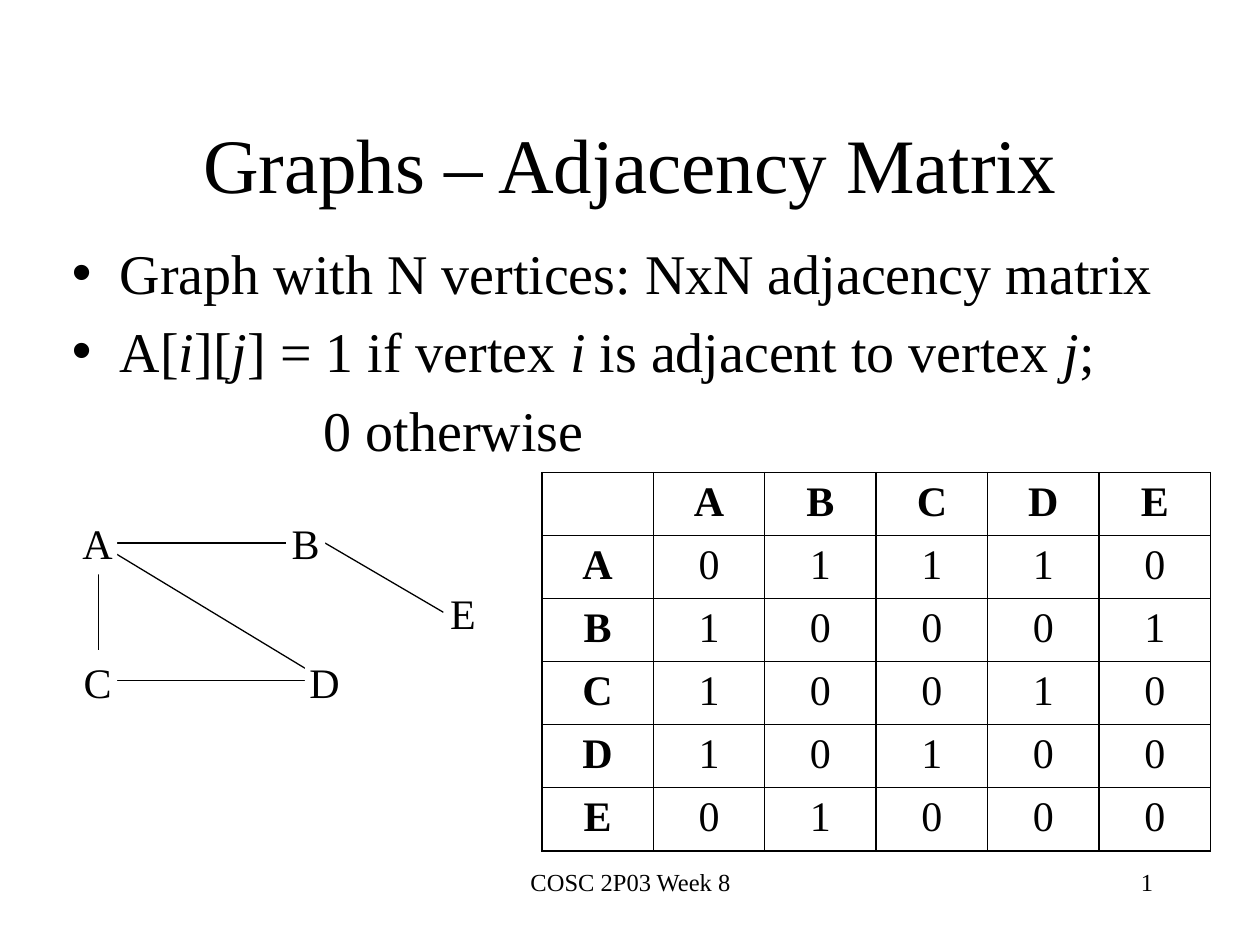
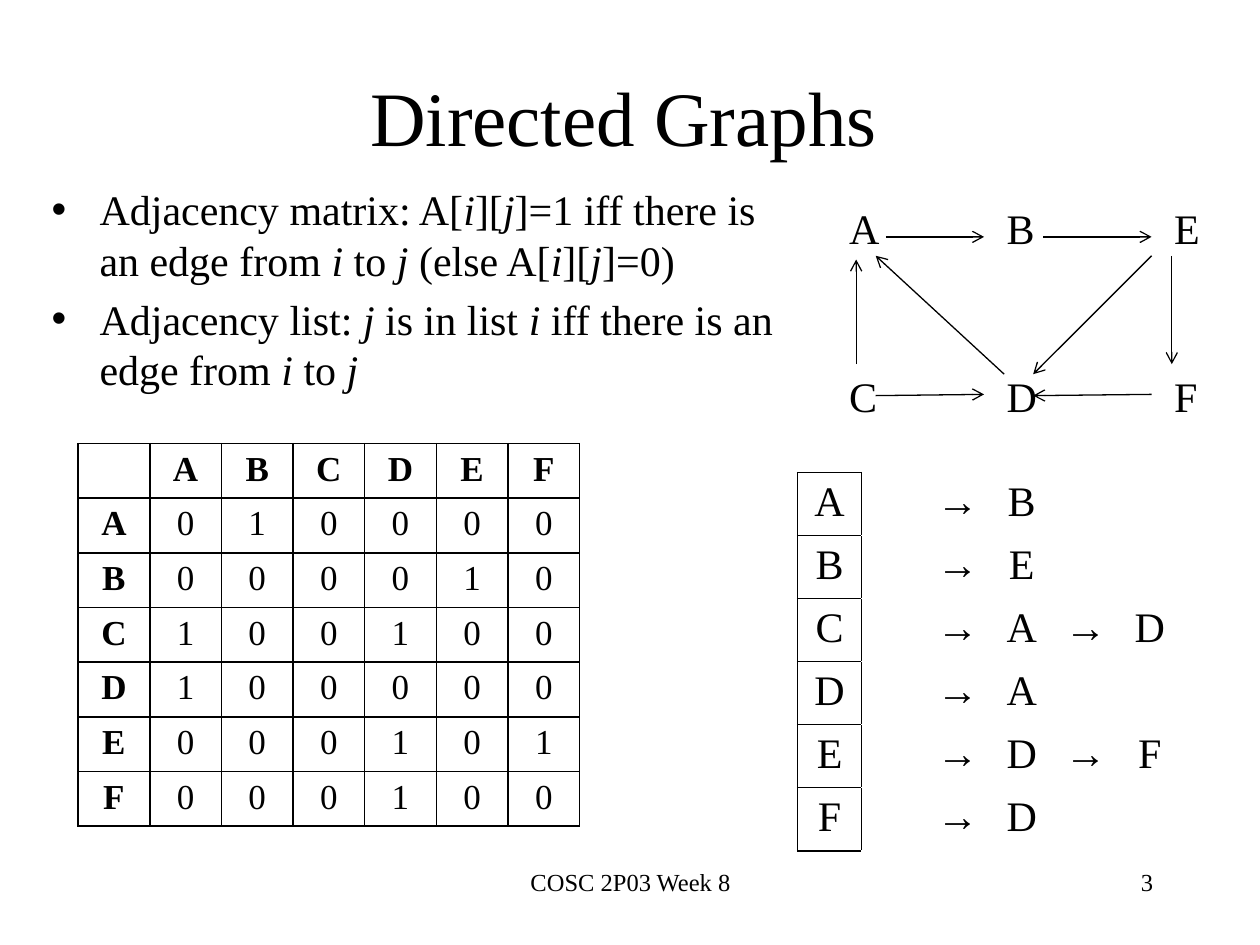
import pptx
import pptx.dml.color
import pptx.enum.shapes
import pptx.enum.text
import pptx.oxml
import pptx.oxml.ns
import pptx.util

Inches = pptx.util.Inches
ALIGN = pptx.enum.text.PP_ALIGN
COLORS = {"ink": "000000", "paper": "FFFFFF"}
FONT = "Times New Roman"
NAMESPACE = pptx.oxml.ns.nsdecls("a")


def write(para, text, size, align=None, bold=False):
    """Fill a paragraph; text between asterisks is italic."""
    if align is not None:
        para.alignment = align
    for index, part in enumerate(text.split("*")):
        if not part:
            continue
        span = para.add_run()
        span.text = part
        look = {"name": FONT, "size": pptx.util.Pt(size), "bold": bold, "italic": index % 2 == 1}
        for key, value in look.items():
            setattr(span.font, key, value)
        span.font.color.rgb = pptx.dml.color.RGBColor.from_string(COLORS["ink"])


def add_grid(page, area, rows, size, boxed_list=False):
    """Draw a ruled matrix, or a list whose first column alone is ruled."""
    frame = page.shapes.add_table(len(rows), len(rows[0]), *map(Inches, area))
    table = frame.table
    table.first_row = table.horz_banding = False
    for r, row in enumerate(rows):
        for c, text in enumerate(row):
            cell = table.cell(r, c)
            for side in ("left", "right", "top", "bottom"):
                setattr(cell, f"margin_{side}", Inches(0.05))
            header = not boxed_list and (r == 0 or c == 0)
            write(cell.text_frame.paragraphs[0], text, size, ALIGN.CENTER, header)
            if boxed_list:
                cell.fill.solid()
                cell.fill.fore_color.rgb = pptx.dml.color.RGBColor.from_string(COLORS["paper"])
            else:
                cell.fill.background()
            # Borders come before the fill in the cell properties
            properties = cell._tc.get_or_add_tcPr()
            for position, edge in enumerate("LRTB"):
                ruled = not boxed_list or c == 0 or (c == 1 and edge == "L")
                color = COLORS["ink" if ruled else "paper"]
                properties.insert(position, pptx.oxml.parse_xml(
                    f'<a:ln{edge} {NAMESPACE} w="12700"><a:solidFill>'
                    f'<a:srgbClr val="{color}"/></a:solidFill></a:ln{edge}>'))


# Edge ends are points, or a node name with the side to join
pages = [
    {
        "title": "Graphs – Adjacency Matrix", "title_area": (0.75, 0.67, 8.5, 1.25),
        "body_area": (0.47, 1.84, 9.06, 4.83), "body_size": 32, "number": "1",
        "body": ["Graph with N vertices: NxN adjacency matrix",
                 "A[*i*][*j*] = 1 if vertex *i* is adjacent to vertex *j*;"],
        "continuation": "0 otherwise",
        "directed": False,
        "nodes": {"A": (0.62, 4.06), "C": (0.62, 5.16), "B": (2.27, 4.06),
                  "D": (2.42, 5.16), "E": (3.52, 4.61)},
        "edges": [((0.78, 4.31), ("B", 3)), ((0.78, 4.31), (0.78, 5.4)),
                  ((0.78, 4.31), (2.58, 5.4)), (("B", 3), ("E", 1)),
                  ((0.78, 5.4), (2.58, 5.4))],
        "matrix_area": (4.3, 3.75, 5.31, 3), "matrix_size": 24,
        "matrix": {"A": "01110", "B": "10001", "C": "10010", "D": "10100", "E": "01000"},
    },
    {
        "title": "Directed Graphs", "title_area": (0.7, 0.55, 8.5, 0.74),
        "body_area": (0.31, 1.41, 6.09, 5.39), "body_size": 24, "number": "3",
        "body": ["Adjacency matrix: A[*i*][*j*]=1 iff there is an edge from *i* to *j* "
                 "(else A[*i*][*j*]=0)",
                 "Adjacency list: *j* is in list *i *iff there is an edge from *i* to *j*"],
        "directed": True,
        "nodes": {"A": (6.64, 1.56), "C": (6.64, 2.89), "D": (7.89, 2.89),
                  "F": (9.22, 2.89), "E": (9.22, 1.56), "B": (7.89, 1.56)},
        "edges": [((7.03, 1.88), (7.81, 1.88)), ((8.28, 1.88), (9.14, 1.88)),
                  ((9.3, 2.03), (9.3, 2.89)), ((7.97, 2.97), (6.95, 2.03)),
                  ((9.14, 2.03), (8.2, 2.97)), (("C", 0), ("A", 2)),
                  ((9.14, 3.13), ("D", 3)), (("C", 3), (7.81, 3.13))],
        "matrix_area": (0.62, 3.52, 3.98, 3.03), "matrix_size": 20,
        "matrix": {"A": "010000", "B": "000010", "C": "100100",
                   "D": "100000", "E": "000101", "F": "000100"},
    },
]

deck = pptx.Presentation()
deck.slide_width, deck.slide_height = Inches(10), Inches(7.5)

for content in pages:
    page = deck.slides.add_slide(deck.slide_layouts[1])

    # Title and bullets
    title, body = page.shapes.title, page.placeholders[1]
    for holder, area in ((title, content["title_area"]), (body, content["body_area"])):
        for key, value in zip(("left", "top", "width", "height"), area):
            setattr(holder, key, Inches(value))
        holder.text_frame.auto_size = pptx.enum.text.MSO_AUTO_SIZE.NONE
    write(title.text_frame.paragraphs[0], content["title"], 44, ALIGN.CENTER)
    for index, text in enumerate(content["body"]):
        para = body.text_frame.add_paragraph() if index else body.text_frame.paragraphs[0]
        write(para, text, content["body_size"])
        properties = para._p.get_or_add_pPr()
        properties.set("marL", str(Inches(0.38)))
        properties.set("indent", str(-Inches(0.38)))
    if "continuation" in content:
        para = body.text_frame.add_paragraph()
        write(para, content["continuation"], content["body_size"])
        properties = para._p.get_or_add_pPr()
        properties.set("marL", str(Inches(2)))
        properties.set("indent", "0")
        properties.append(pptx.oxml.parse_xml(f"<a:buNone {NAMESPACE}/>"))

    # Footer and page number
    for text, left, width, align in (("COSC 2P03 Week 8", 3.42, 3.17, ALIGN.CENTER),
                                     (content["number"], 7.17, 2.08, ALIGN.RIGHT)):
        box = page.shapes.add_textbox(Inches(left), Inches(6.83), Inches(width), Inches(0.5))
        box.text_frame.word_wrap = True
        write(box.text_frame.paragraphs[0], text, 14, align)

    # Graph nodes
    nodes = {}
    for name, (left, top) in content["nodes"].items():
        area = [Inches(value) for value in (left, top, 0.31, 0.5)]
        if content["directed"]:
            node = page.shapes.add_textbox(*area)
        else:
            node = page.shapes.add_shape(pptx.enum.shapes.MSO_SHAPE.RECTANGLE, *area)
            node.shadow.inherit = False
            node.fill.solid()
            node.fill.fore_color.rgb = pptx.dml.color.RGBColor.from_string(COLORS["paper"])
            node.line.fill.background()
            node.text_frame.margin_left = node.text_frame.margin_right = 0
        node.text_frame.word_wrap = True
        write(node.text_frame.paragraphs[0], name, 24, ALIGN.CENTER)
        nodes[name] = node

    # Graph edges, placed behind the nodes
    for ends in content["edges"]:
        points = [(0, 0) if end[0] in nodes else end for end in ends]
        edge = page.shapes.add_connector(
            pptx.enum.shapes.MSO_CONNECTOR.STRAIGHT,
            *(Inches(value) for point in points for value in point))
        for end, connect in zip(ends, (edge.begin_connect, edge.end_connect)):
            if end[0] in nodes:
                connect(nodes[end[0]], end[1])
        edge.line.width = pptx.util.Pt(0.75)
        edge.line.color.rgb = pptx.dml.color.RGBColor.from_string(COLORS["ink"])
        if content["directed"]:
            edge.line._get_or_add_ln().append(
                pptx.oxml.parse_xml(f'<a:tailEnd {NAMESPACE} type="arrow"/>'))
        edge.element.spPr.append(pptx.oxml.parse_xml(f"<a:effectLst {NAMESPACE}/>"))
        nodes["A"].element.addprevious(edge.element)

    # Adjacency matrix
    matrix = content["matrix"]
    rows = [["", *matrix]] + [[name, *values] for name, values in matrix.items()]
    add_grid(page, content["matrix_area"], rows, content["matrix_size"])

    # Adjacency list, read off the matrix
    if content["directed"]:
        rows = []
        for name, values in matrix.items():
            row = [name, ""]
            for target, value in zip(matrix, values):
                if value == "1":
                    row += ["→", target]
            rows.append(row + [""] * (6 - len(row)))
        add_grid(page, (6.33, 3.75, 3.05, 3), rows, 24, boxed_list=True)

deck.save("out.pptx")
